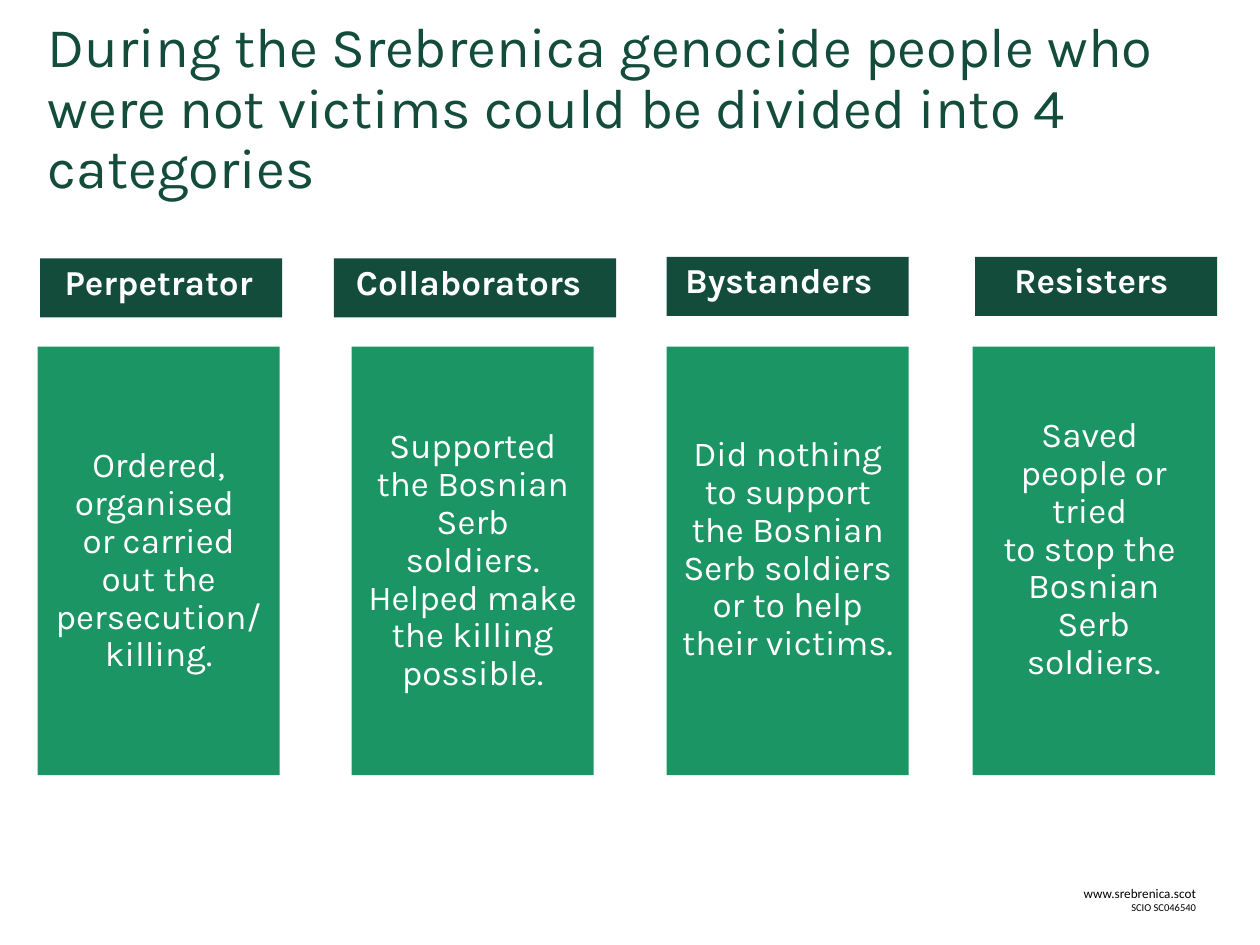
from lxml.etree import SubElement
from pptx import Presentation
from pptx.dml.color import RGBColor
from pptx.enum.shapes import MSO_SHAPE
from pptx.enum.text import MSO_ANCHOR, MSO_AUTO_SIZE, PP_ALIGN
from pptx.oxml.ns import qn
from pptx.util import Cm, Pt

DARK_GREEN = RGBColor(0x14, 0x4C, 0x3B)
GREEN = RGBColor(0x00, 0x89, 0x52)
WHITE = RGBColor(0xFF, 0xFF, 0xFF)
BLACK = RGBColor(0x00, 0x00, 0x00)

TITLE = ("During the Srebrenica genocide people who were not victims "
         "could be divided into 4 categories")

COLUMN_WIDTH, HEADING_HEIGHT = 4.88, 1.19
DESCRIPTION_TOP, DESCRIPTION_HEIGHT = 6.99, 8.64

# heading, heading box (left, top, width), extra right inset,
# description, description left, extra bottom inset
CATEGORIES = [
    ("Perpetrator", (0.81, 5.21, COLUMN_WIDTH), 0.1,
     "Ordered, organised \vor carried out the persecution/ killing.", 0.76, 0),
    ("Collaborators", (6.73, 5.21, 5.69), 0.25,
     "Supported the Bosnian Serb soldiers. Helped make the killing possible.",
     7.09, 0),
    ("Bystanders", (13.44, 5.18, COLUMN_WIDTH), 0.36,
     "Did nothing to support the Bosnian Serb soldiers or to help their victims.",
     13.44, 0.45),
    ("Resisters", (19.66, 5.18, COLUMN_WIDTH), 0.2,
     "Saved \vpeople or tried \vto stop the \vBosnian Serb soldiers.",
     19.61, 0.45),
]


def apply(target, formats):
    for name, value in formats.items():
        setattr(target, name, value)


def write(paragraph, text, size, color, font="Karla", bold=False, **layout):
    paragraph.text = text
    apply(paragraph, layout)
    for run in paragraph.runs:
        apply(run.font, {"name": font, "size": Pt(size), "bold": bold})
        run.font.color.rgb = color


def place(shape, box):
    for name, value in zip(("left", "top", "width", "height"), box):
        setattr(shape, name, Cm(value))


def add_panel(slide, box, color, insets, anchor, opacity=100):
    """Add a borderless rectangle and return its text frame."""
    panel = slide.shapes.add_shape(MSO_SHAPE.RECTANGLE, *map(Cm, box))
    panel.shadow.inherit = False
    panel.fill.solid()
    panel.fill.fore_color.rgb = color
    panel.line.fill.background()
    if opacity < 100:
        srgb = panel.fill._xPr.find(qn("a:solidFill"))[0]
        SubElement(srgb, qn("a:alpha"), val=str(opacity * 1000))
    sides = ("margin_left", "margin_top", "margin_right", "margin_bottom")
    frame = panel.text_frame
    apply(frame, dict(zip(sides, map(Cm, insets))))
    apply(frame, {"word_wrap": True, "vertical_anchor": anchor})
    return frame


def add_title(slide, box):
    title = slide.shapes.title
    place(title, box)
    apply(title.text_frame, {"word_wrap": True,
                             "auto_size": MSO_AUTO_SIZE.NONE,
                             "vertical_anchor": MSO_ANCHOR.MIDDLE})
    write(title.text_frame.paragraphs[0], TITLE, 32, DARK_GREEN,
          alignment=PP_ALIGN.LEFT, line_spacing=0.9)


def add_heading(slide, box, heading, extra_right):
    frame = add_panel(slide, box, DARK_GREEN,
                      (0.25, 0.13, 0.25 + extra_right, 0.13), MSO_ANCHOR.TOP)
    write(frame.paragraphs[0], heading, 20, WHITE, bold=True,
          alignment=PP_ALIGN.CENTER, line_spacing=0.9)


def add_description(slide, box, description, extra_bottom):
    frame = add_panel(slide, box, GREEN, (0.3, 0, 0.3, extra_bottom),
                      MSO_ANCHOR.MIDDLE, opacity=89)
    write(frame.paragraphs[0], description, 20, WHITE,
          alignment=PP_ALIGN.CENTER, line_spacing=0.9)


def add_footer(slide, box):
    frame = slide.shapes.add_textbox(*map(Cm, box)).text_frame
    frame.word_wrap = True
    address, charity_number = frame.paragraphs[0], frame.add_paragraph()
    write(address, "www.srebrenica.scot", 7.5, BLACK, "Calibri",
          alignment=PP_ALIGN.RIGHT)
    write(charity_number, "SCIO SC046540", 6, BLACK, "Calibri",
          alignment=PP_ALIGN.RIGHT)


def main():
    deck = Presentation()
    apply(deck, {"slide_width": Cm(25.4), "slide_height": Cm(19.05)})
    slide = deck.slides.add_slide(deck.slide_layouts.get_by_name("Title Only"))
    add_footer(slide, (17.93, 17.73, 6.43, 1.02))
    add_title(slide, (0.71, 0.38, 23.98, 3.68))
    for heading, spot, extra_right, description, left, extra_bottom in CATEGORIES:
        add_heading(slide, (*spot, HEADING_HEIGHT), heading, extra_right)
        add_description(
            slide, (left, DESCRIPTION_TOP, COLUMN_WIDTH, DESCRIPTION_HEIGHT),
            description, extra_bottom)
    deck.save("out.pptx")


if __name__ == "__main__":
    main()
